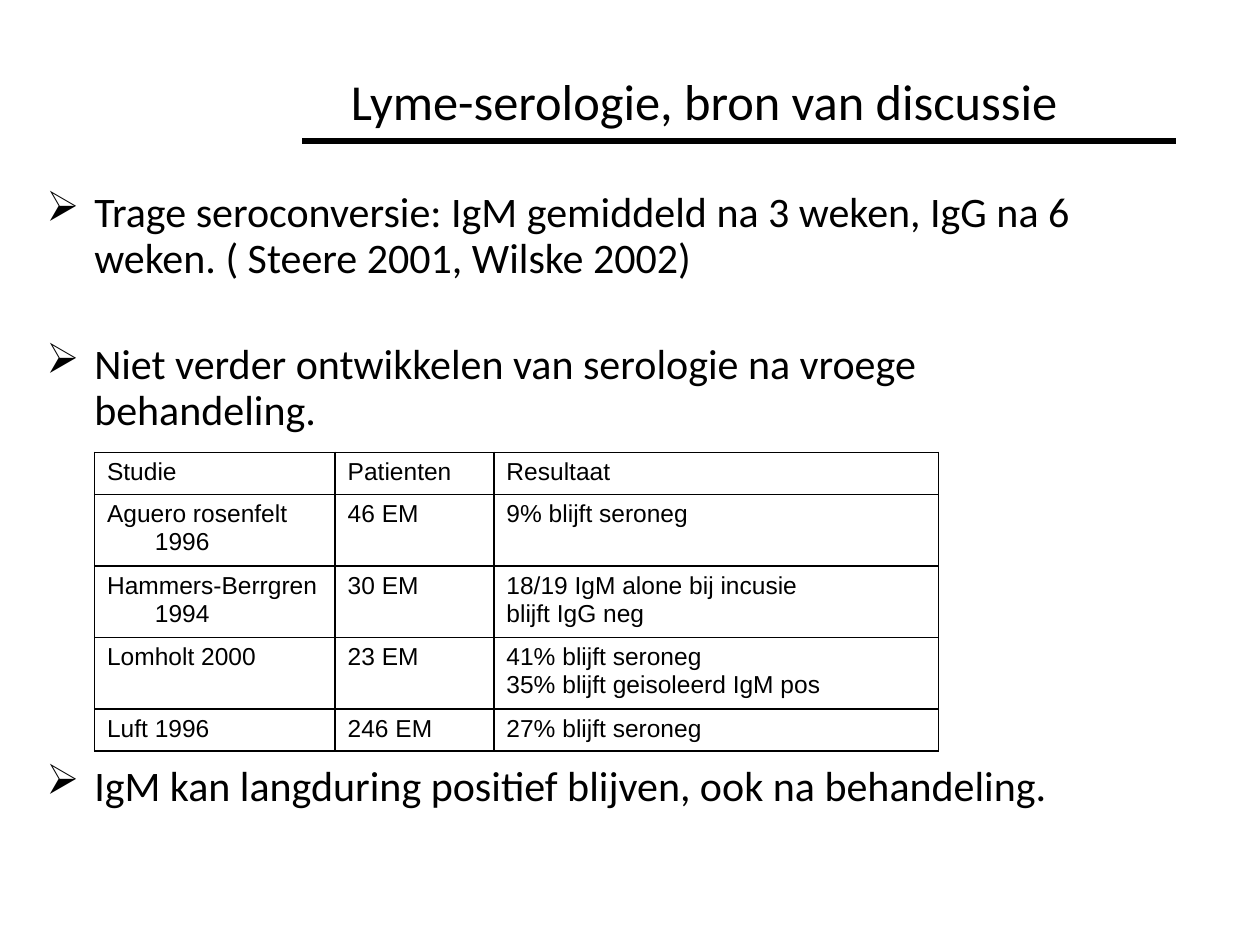
import pptx
import pptx.util
import pptx.dml.color
import pptx.enum.shapes
import pptx.enum.text
import pptx.oxml.ns
from dataclasses import dataclass
from lxml import etree

Inches, Pt = pptx.util.Inches, pptx.util.Pt
qn = pptx.oxml.ns.qn


@dataclass(frozen=True)
class Theme:
    ink: str = "000000"
    paper: str = "FFFFFF"
    heading_font: str = "Calibri"
    table_font: str = "Arial"
    title_size: float = 28.8
    body_size: float = 24
    table_size: float = 14
    rule_width: float = 3
    border_width: float = 1
    hang: float = 0.38


T = Theme()

# Bullet text and the space before it, in points
BULLETS = [
    ("Trage seroconversie: IgM gemiddeld na 3 weken, IgG na 6 weken. ( Steere 2001, Wilske 2002)", 0),
    ("Niet verder ontwikkelen van serologie na vroege behandeling.", 35),
    ("IgM kan langduring positief blijven, ook na behandeling.", 189),
]
COLUMNS = [1.91, 1.26, 3.53]
STUDIES = [
    ["Studie", "Patienten", "Resultaat"],
    ["Aguero rosenfelt 1996", "46 EM", "9% blijft seroneg"],
    ["Hammers-Berrgren 1994", "30 EM", "18/19 IgM alone bij incusie\nblijft IgG neg"],
    ["Lomholt 2000", "23 EM", "41% blijft seroneg\n35% blijft geisoleerd IgM pos"],
    ["Luft 1996", "246 EM", "27% blijft seroneg"],
]
ROW_HEIGHTS = [0.32, 0.54, 0.54, 0.54, 0.32]


def rgb(value):
    return pptx.dml.color.RGBColor.from_string(value)


def write(p, text, font, size, align=None, hang=0, bullet=None, before=0, spacing=None):
    """Fill one paragraph with a formatted run."""
    r = p.add_run()
    r.text = text
    r.font.name, r.font.size = font, Pt(size)
    r.font.color.rgb = rgb(T.ink)
    p.alignment = align
    p.space_before = Pt(before)
    p.line_spacing = spacing
    pPr = p._p.get_or_add_pPr()
    if hang:
        pPr.set("marL", str(Inches(hang)))
        pPr.set("indent", str(-Inches(hang)))
    if bullet:
        etree.SubElement(pPr, qn("a:buChar")).set("char", bullet)


def add_text_frame(s, box, anchor):
    tf = s.shapes.add_textbox(*map(Inches, box)).text_frame
    tf.word_wrap = True
    tf.vertical_anchor = anchor
    return tf


def add_title(s, box, text):
    tf = add_text_frame(s, box, pptx.enum.text.MSO_ANCHOR.MIDDLE)
    write(tf.paragraphs[0], text, T.heading_font, T.title_size,
          align=pptx.enum.text.PP_ALIGN.CENTER)


def add_rule(s, left, right, y):
    line = s.shapes.add_connector(pptx.enum.shapes.MSO_CONNECTOR.STRAIGHT,
                                  Inches(left), Inches(y), Inches(right), Inches(y))
    line.line.color.rgb = rgb(T.ink)
    line.line.width = Pt(T.rule_width)
    etree.SubElement(line._element.spPr, qn("a:effectLst"))


def add_bullets(s, box, items):
    tf = add_text_frame(s, box, pptx.enum.text.MSO_ANCHOR.TOP)
    for i, (text, before) in enumerate(items):
        p = tf.add_paragraph() if i else tf.paragraphs[0]
        write(p, text, T.heading_font, T.body_size, hang=T.hang,
              bullet="➢", before=before, spacing=0.9)


def set_borders(cell):
    tcPr = cell._tc.get_or_add_tcPr()
    for i, side in enumerate(("lnL", "lnR", "lnT", "lnB")):
        ln = etree.Element(qn(f"a:{side}"), w=str(Pt(T.border_width)))
        fill = etree.SubElement(ln, qn("a:solidFill"))
        etree.SubElement(fill, qn("a:srgbClr")).set("val", T.ink)
        tcPr.insert(i, ln)


def add_study_table(s, left, top, rows):
    table = s.shapes.add_table(len(rows), len(COLUMNS), Inches(left), Inches(top),
                               Inches(sum(COLUMNS)), Inches(sum(ROW_HEIGHTS))).table
    table.first_row = table.horz_banding = False
    for column, width in zip(table.columns, COLUMNS):
        column.width = Inches(width)
    for row, height, texts in zip(table.rows, ROW_HEIGHTS, rows):
        row.height = Inches(height)
        for cell, text in zip(row.cells, texts):
            cell.fill.background()
            set_borders(cell)
            tf = cell.text_frame
            for i, line in enumerate(text.split("\n")):
                p = tf.add_paragraph() if i else tf.paragraphs[0]
                write(p, line, T.table_font, T.table_size, hang=T.hang)


def main():
    prs = pptx.Presentation()
    prs.slide_width, prs.slide_height = Inches(10), Inches(7.5)
    s = prs.slides.add_slide(prs.slide_layouts[6])
    s.background.fill.solid()
    s.background.fill.fore_color.rgb = rgb(T.paper)

    # Heading
    add_title(s, (1.93, 0.59, 7.32, 0.42), "Lyme-serologie, bron van discussie")
    add_rule(s, 2.4, 9.33, 1.12)
    # Findings, with the study table in the gap before the last one
    add_bullets(s, (0.27, 1.47, 8.66, 5.51), BULLETS)
    add_study_table(s, 0.75, 3.59, STUDIES)

    prs.save("out.pptx")


if __name__ == "__main__":
    main()
